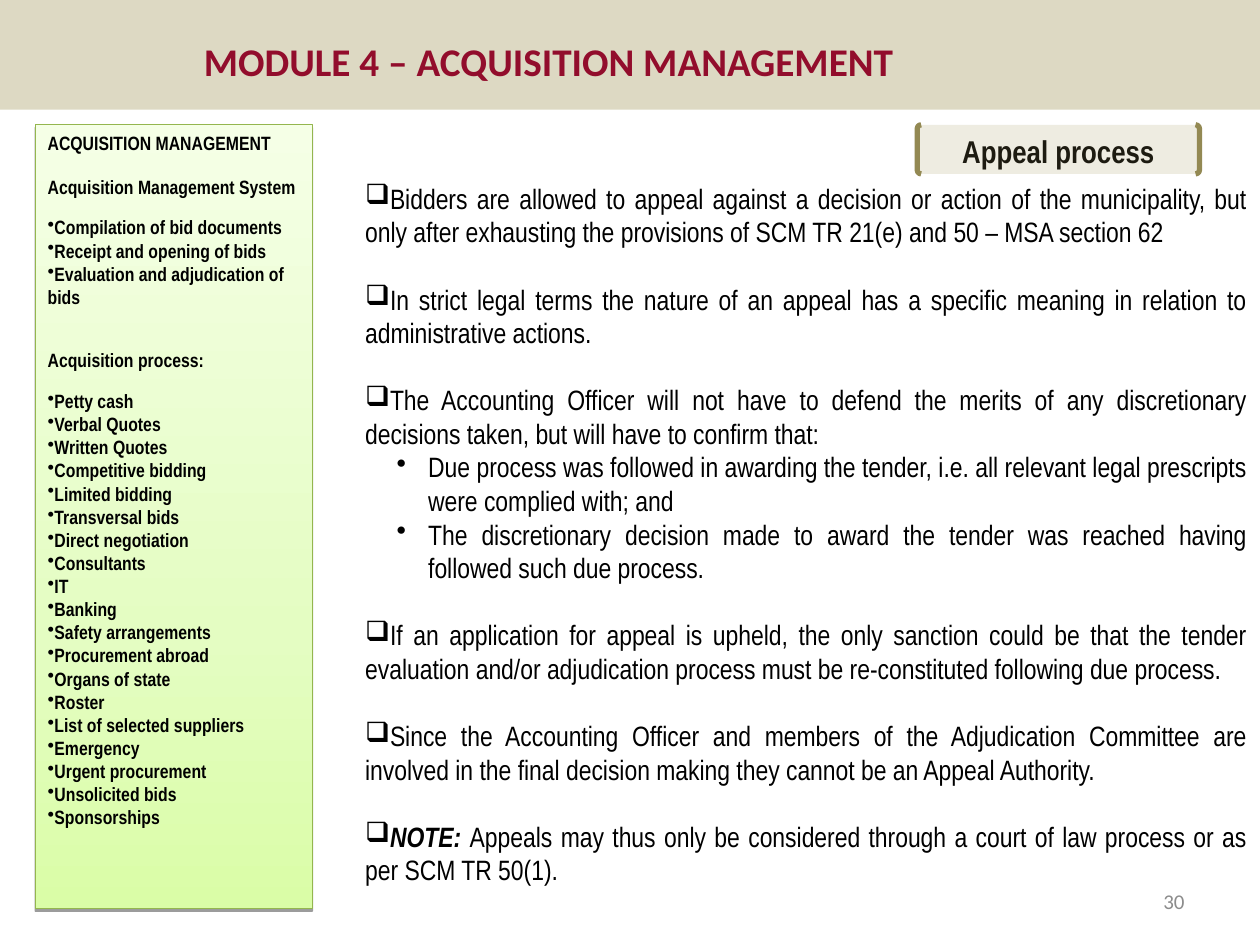
"""Build the appeal process slide of the acquisition management module."""
from copy import deepcopy

from lxml import etree
from pptx import Presentation
from pptx import util as u
from pptx.dml.color import RGBColor
from pptx.enum import shapes, text
from pptx.oxml.ns import qn

COLORS = {
    "band": "DDD9C3", "title": "920D2C", "number": "8C8C8C", "black": "000000",
    "tag": "EEECE1", "tag_line": "938953", "tag_text": "1D1B11",
    "panel_line": "94B64E", "panel_dark": "DAFDA7",
    "panel_mid": "E4FDC2", "panel_light": "F5FFE6",
}
ALIGN = text.PP_ALIGN
BODY_LINE = 19.2
PANEL_LINE = 13.2

SYSTEM_STEPS = [
    "Compilation of bid documents", "Receipt and opening of bids",
    "Evaluation and adjudication of bids",
]
PROCESS_STEPS = [
    "Petty cash", "Verbal Quotes", "Written Quotes", "Competitive bidding",
    "Limited bidding", "Transversal bids", "Direct negotiation", "Consultants",
    "IT", "Banking", "Safety arrangements", "Procurement abroad",
    "Organs of state", "Roster", "List of selected suppliers", "Emergency",
    "Urgent procurement", "Unsolicited bids", "Sponsorships",
]
APPEAL_POINTS = [
    ("Bidders are allowed to appeal against a decision or action of the municipality, "
     "but only after exhausting the provisions of SCM TR 21(e) and 50 – MSA section 62", []),
    ("In strict legal terms the nature of an appeal has a specific meaning in relation "
     "to administrative actions.", []),
    ("The Accounting Officer will not have to defend the merits of any discretionary "
     "decisions taken, but will have to confirm that:",
     ["Due process was followed in awarding the tender, i.e. all relevant legal "
      "prescripts were complied with; and",
      "The discretionary decision made to award the tender was reached having followed "
      "such due process."]),
    ("If an application for appeal is upheld, the only sanction could be that the tender "
     "evaluation and/or adjudication process must be re-constituted following due process.", []),
    ("Since the Accounting Officer and members of the Adjudication Committee are involved "
     "in the final decision making they cannot be an Appeal Authority.", []),
]
NOTE = "Appeals may thus only be considered through a court of law process or as per SCM TR 50(1)."


class SlideBuilder:
    """Hold the style and the current slide, and add each kind of element."""

    def __init__(self, slide, font):
        self.slide = slide
        self.font = font

    def color(self, name):
        """Return a named colour."""
        return RGBColor.from_string(COLORS[name])

    def shape(self, kind, box, fill, line=None, width=0):
        """Add a preset shape with a plain fill."""
        shape = self.slide.shapes.add_shape(kind, *map(u.Inches, box))
        shape.shadow.inherit = False
        shape.fill.solid()
        shape.fill.fore_color.rgb = self.color(fill)
        if line:
            shape.line.color.rgb = self.color(line)
            shape.line.width = u.Pt(width)
        else:
            shape.line.fill.background()
        shape.text_frame.word_wrap = True
        shape.text_frame.vertical_anchor = text.MSO_ANCHOR.TOP
        return shape

    def gradient(self, shape, stops):
        """Fill a shape with a gradient that runs from bottom to top."""
        shape.fill.gradient()
        shape.fill.gradient_angle = 90
        stop_list = shape.element.spPr.find(".//" + qn("a:gsLst"))
        while len(stop_list) < len(stops):
            stop_list.append(deepcopy(stop_list[-1]))
        for stop, (position, name) in zip(shape.fill.gradient_stops, stops):
            stop.position = position
            stop.color.rgb = self.color(name)

    def drop_shadow(self, shape, distance, alpha):
        """Add a sharp shadow below a shape."""
        effects = shape.element.spPr.find(qn("a:effectLst"))
        shadow = etree.SubElement(effects, qn("a:outerShdw"), blurRad="0",
                                  dist=str(u.Pt(distance)), dir="5400000", rotWithShape="0")
        color = etree.SubElement(shadow, qn("a:srgbClr"), val=COLORS["black"])
        etree.SubElement(color, qn("a:alpha"), val=str(alpha * 1000))

    def text_box(self, box, anchor=text.MSO_ANCHOR.TOP):
        """Add a wrapping text box and return its frame."""
        frame = self.slide.shapes.add_textbox(*map(u.Inches, box)).text_frame
        frame.word_wrap = True
        frame.vertical_anchor = anchor
        return frame

    def paragraph(self, frame, size, color, runs, align=ALIGN.LEFT, before=0, after=0,
                  bullet=None, left=0, hanging=0, font=None):
        """Write a paragraph of (text, bold, italic) runs."""
        first = frame.paragraphs[0]
        paragraph = frame.add_paragraph() if first.runs else first
        paragraph.alignment = align
        paragraph.space_before = u.Pt(before)
        paragraph.space_after = u.Pt(after)
        if bullet:
            properties = paragraph._p.get_or_add_pPr()
            properties.set("marL", str(u.Inches(left)))
            properties.set("indent", str(-u.Inches(hanging)))
            etree.SubElement(properties, qn("a:buChar"), char=bullet)
        for words, bold, italic in runs:
            run = paragraph.add_run()
            run.text = words
            run.font.name = font or self.font
            run.font.size = u.Pt(size)
            run.font.bold = bold
            run.font.italic = italic
            run.font.color.rgb = self.color(color)


def add_header(builder):
    """Add the title band and the slide number."""
    builder.shape(shapes.MSO_SHAPE.RECTANGLE, (0, 0, 10, 0.87), "band")
    title = builder.text_box((1.52, 0.21, 6.07, 0.55), text.MSO_ANCHOR.MIDDLE)
    builder.paragraph(title, 22.4, "title", [("MODULE 4 – ACQUISITION MANAGEMENT", True, False)],
                      font="Calibri")
    number = builder.text_box((7.17, 6.95, 2.33, 0.4), text.MSO_ANCHOR.MIDDLE)
    builder.paragraph(number, 12, "number", [("30", False, False)], ALIGN.RIGHT, font="Calibri")


def add_appeal_points(builder):
    """Add the main text on appeals."""
    frame = builder.text_box((2.8, 1.39, 7.2, 5.76))

    def write(runs, **layout):
        builder.paragraph(frame, 16, "black", runs, ALIGN.JUSTIFY, **layout)

    for index, (point, details) in enumerate(APPEAL_POINTS):
        write([(point, False, False)], bullet="❑", before=BODY_LINE if index else 0)
        for detail in details:
            write([(detail, False, False)], bullet="•", left=0.5, hanging=0.25)
    write([("NOTE: ", True, True), (NOTE, False, False)], bullet="❑", before=BODY_LINE)


def add_tag(builder):
    """Add the bracketed topic tag."""
    tag = builder.shape(shapes.MSO_SHAPE.DOUBLE_BRACKET, (7.28, 0.99, 2.24, 0.39),
                        "tag", "tag_line", 3)
    tag.adjustments[0] = 0.08
    frame = tag.text_frame
    frame.margin_left = frame.margin_right = u.Inches(0.05)
    frame.margin_top = frame.margin_bottom = u.Inches(0.05)
    builder.paragraph(frame, 18, "tag_text", [("Appeal process", True, False)],
                      ALIGN.CENTER, after=10)


def add_panel(builder):
    """Add the outline panel on the left."""
    panel = builder.shape(shapes.MSO_SHAPE.RECTANGLE, (0.28, 0.99, 2.2, 6.22),
                          "panel_mid", "panel_line", 0.75)
    builder.gradient(panel, [(0, "panel_dark"), (0.35, "panel_mid"), (1, "panel_light")])
    builder.drop_shadow(panel, 1.6, 38)

    def write(words, **layout):
        builder.paragraph(panel.text_frame, 11, "black", [(words, True, False)], **layout)

    write("ACQUISITION MANAGEMENT", after=12)
    write("Acquisition Management System", after=10)
    for step in SYSTEM_STEPS:
        write(step, bullet="•", after=PANEL_LINE + 10 if step == SYSTEM_STEPS[-1] else 0)
    write("Acquisition process:", after=10)
    for step in PROCESS_STEPS:
        write(step, bullet="•")


def main():
    """Build and save the slide."""
    presentation = Presentation()
    presentation.slide_width = u.Inches(10)
    presentation.slide_height = u.Inches(7.5)
    slide = presentation.slides.add_slide(presentation.slide_layouts[6])
    builder = SlideBuilder(slide, "Arial Narrow")
    add_header(builder)
    add_appeal_points(builder)
    add_tag(builder)
    add_panel(builder)
    presentation.save("out.pptx")


if __name__ == "__main__":
    main()
